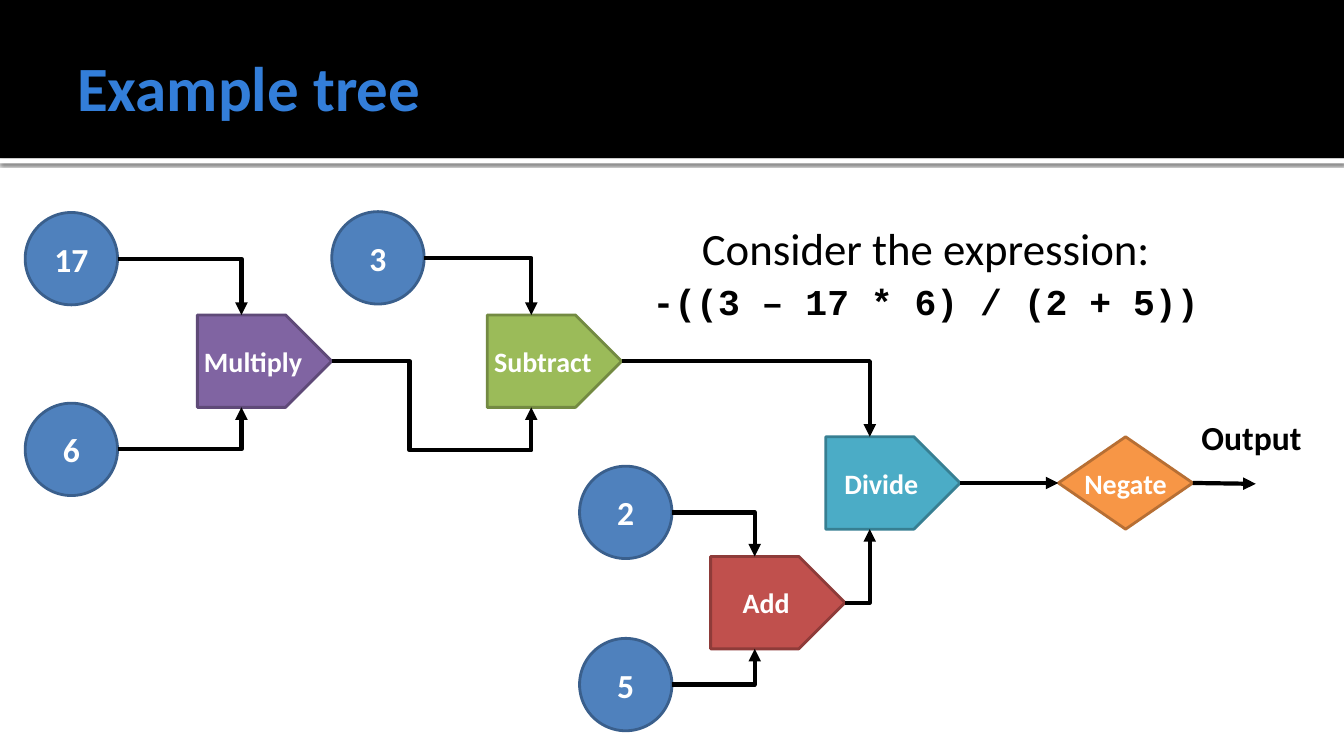
"""Build the slide that shows an expression tree."""
from lxml import etree
from pptx import Presentation
from pptx.dml.color import RGBColor
from pptx.enum.shapes import MSO_CONNECTOR, MSO_SHAPE
from pptx.enum.text import MSO_ANCHOR, MSO_AUTO_SIZE, PP_ALIGN
from pptx.oxml import parse_xml
from pptx.oxml.ns import nsdecls, qn
from pptx.util import Inches, Pt

STRAIGHT, ELBOW = MSO_CONNECTOR.STRAIGHT, MSO_CONNECTOR.ELBOW
RECT, CIRCLE = MSO_SHAPE.RECTANGLE, MSO_SHAPE.OVAL
PLATE, DIAMOND = MSO_SHAPE.PENTAGON, MSO_SHAPE.FLOWCHART_DECISION
LEFT, CENTER = PP_ALIGN.LEFT, PP_ALIGN.CENTER
TOP, MIDDLE = MSO_ANCHOR.TOP, MSO_ANCHOR.MIDDLE
NO_FIT = MSO_AUTO_SIZE.NONE

WIDTH, HEIGHT = Inches(40 / 3), Inches(7.5)
COLUMNS, ROWS = 160, 90
NODE_H, OP_W = 11, 16
PORT = 5.25

COLORS = {
    "black": "000000", "white": "FFFFFF", "title": "337ED9",
    "number": "4F81BD", "number_line": "3A5F8C",
    "multiply": "8064A2", "multiply_line": "5F4A78",
    "subtract": "9BBB59", "subtract_line": "738A42",
    "add": "C0504D", "add_line": "8E3B39",
    "divide": "4BACC6", "divide_line": "377F92",
    "negate": "F79646", "negate_line": "B76F34",
}
NUMBERS = {"17": (3, 25.3), "6": (3, 48), "3": (39.5, 25.2),
           "2": (69, 55.5), "5": (69, 76)}
OPERATORS = {"Multiply": (23.5, 37.5), "Subtract": (58, 37.5),
             "Divide": (98.3, 52), "Add": (84.6, 66.25), "Negate": (126, 52)}
LINKS = [("17", "Multiply", "top"), ("6", "Multiply", "bottom"),
         ("3", "Subtract", "top"), ("2", "Add", "top"), ("5", "Add", "bottom"),
         ("Subtract", "Divide", "top"), ("Add", "Divide", "bottom")]


def rgb(name):
    """Return a named colour."""
    return RGBColor.from_string(COLORS[name])


def col(n):
    """Return the length of n grid columns."""
    return int(WIDTH * n / COLUMNS)


def row(n):
    """Return the length of n grid rows."""
    return int(HEIGHT * n / ROWS)


def box(x, y, w, h):
    """Return a grid rectangle as slide lengths."""
    return col(x), row(y), col(w), row(h)


def put(obj, **values):
    """Set the given attributes on an object."""
    for name, value in values.items():
        setattr(obj, name, value)


def write(p, text, size, color, bold=True, font="Calibri", align=CENTER):
    """Write one formatted run into a paragraph."""
    p.alignment = align
    r = p.add_run()
    r.text = text
    put(r.font, size=Pt(size), bold=bold, name=font)
    r.font.color.rgb = rgb(color)


def place(sp, area):
    """Move a placeholder to a grid rectangle."""
    put(sp, **dict(zip(("left", "top", "width", "height"), box(*area))))


def add_shape(s, kind, area, fill, line=None):
    """Add a flat shape with an optional outline."""
    sp = s.shapes.add_shape(kind, *box(*area))
    sp.shadow.inherit = False
    sp.fill.solid()
    sp.fill.fore_color.rgb = rgb(fill)
    if line:
        sp.line.color.rgb = rgb(line)
        sp.line.width = Pt(2)
    else:
        sp.line.fill.background()
    return sp


def add_node(s, kind, area, text, size, color):
    """Add a labelled node of the tree."""
    sp = add_shape(s, kind, area, color, color + "_line")
    put(sp.text_frame, word_wrap=False, vertical_anchor=MIDDLE)
    write(sp.text_frame.paragraphs[0], text, size, "white")


def add_arrow(s, start, end, preset="line", **adjust):
    """Add a black arrow, straight or bent, between two grid points."""
    kind = STRAIGHT if preset == "line" else ELBOW
    c = s.shapes.add_connector(kind, col(start[0]), row(start[1]),
                               col(end[0]), row(end[1]))
    c.line.color.rgb = rgb("black")
    c.line.width = Pt(3)
    pr = c._element.spPr
    etree.SubElement(pr.find(qn("a:ln")), qn("a:tailEnd"), type="triangle")
    etree.SubElement(pr, qn("a:effectLst"))
    geom = pr.find(qn("a:prstGeom"))
    geom.set("prst", preset)
    for name, share in adjust.items():
        etree.SubElement(geom.find(qn("a:avLst")), qn("a:gd"), name=name,
                         fmla=f"val {round(share * 100000)}")


def outlet(name):
    """Return the point where an arrow leaves a node."""
    x, y = NUMBERS.get(name) or OPERATORS[name]
    return x + (NODE_H if name in NUMBERS else OP_W), y + NODE_H / 2


def inlet(name, side):
    """Return the point where an arrow enters an operator."""
    x, y = OPERATORS[name]
    return x + PORT, y + (NODE_H if side == "bottom" else 0)


def add_header(s):
    """Add the black band and the shadowed white rule behind the title."""
    rule = add_shape(s, RECT, (0, 18.84, COLUMNS, 0.6), "white")
    band = add_shape(s, RECT, (0, 0, COLUMNS, 18.84), "black")
    effects = rule._element.spPr.find(qn("a:effectLst"))
    effects.append(parse_xml(
        f'<a:outerShdw {nsdecls("a")} blurRad="{Pt(2.5)}" dist="{Pt(0.8)}" '
        'dir="5400000" algn="t" rotWithShape="0"><a:srgbClr val="000000">'
        '<a:alpha val="60000"/></a:srgbClr></a:outerShdw>'))
    for i, sp in enumerate((rule, band)):
        s.shapes._spTree.insert(2 + i, sp._element)


def add_title(s, text):
    """Fill the title placeholder."""
    sp = s.shapes.title
    place(sp, (8, 2, 144, 16.5))
    tf = sp.text_frame
    put(tf, auto_size=NO_FIT, vertical_anchor=MIDDLE, margin_right=Inches(0.05))
    write(tf.paragraphs[0], text, 45, "title", align=LEFT)


def add_expression(s, lead, code):
    """Fill the body placeholder with the expression."""
    sp = s.placeholders[1]
    place(sp, (61.7, 25.1, 96, 14.9))
    tf = sp.text_frame
    put(tf, auto_size=NO_FIT, vertical_anchor=TOP, word_wrap=True,
        margin_left=Inches(0.06), margin_top=Inches(0.1))
    first, second = tf.paragraphs[0], tf.add_paragraph()
    for p, gap in ((first, 0), (second, 3)):
        p.space_before = Pt(gap)
        pr = p._p.get_or_add_pPr()
        pr.set("marL", str(Inches(0.13)))
        pr.set("indent", "0")
        etree.SubElement(pr, qn("a:buNone"))
    write(first, lead, 32, "black", bold=False)
    write(second, code, 26, "black", font="Courier New")


def add_output(s, text):
    """Add the label above the last arrow."""
    tf = s.shapes.add_textbox(*box(137, 49, 24, 6)).text_frame
    tf.word_wrap = True
    write(tf.paragraphs[0], text, 24, "black")


def main():
    """Build and save the slide."""
    prs = Presentation()
    put(prs, slide_width=WIDTH, slide_height=HEIGHT)
    s = prs.slides.add_slide(prs.slide_layouts[1])
    add_header(s)
    add_title(s, "Example tree")
    add_expression(s, "Consider the expression:", "-((3 – 17 * 6) / (2 + 5))")
    for text, (x, y) in NUMBERS.items():
        add_node(s, CIRCLE, (x, y, NODE_H, NODE_H), text, 24, "number")
    for text, (x, y) in OPERATORS.items():
        kind = DIAMOND if text == "Negate" else PLATE
        add_node(s, kind, (x, y, OP_W, NODE_H), text, 20, text.lower())
    for source, target, side in LINKS:
        add_arrow(s, outlet(source), inlet(target, side), "bentConnector2")
    add_arrow(s, outlet("Multiply"), inlet("Subtract", "bottom"),
              "bentConnector4", adj1=0.39, adj2=1.93)
    x, y = outlet("Negate")
    add_arrow(s, outlet("Divide"), (OPERATORS["Negate"][0], y))
    add_arrow(s, (x, y), (x + 7.5, y + 0.1))
    add_output(s, "Output")
    prs.save("out.pptx")


if __name__ == "__main__":
    main()
